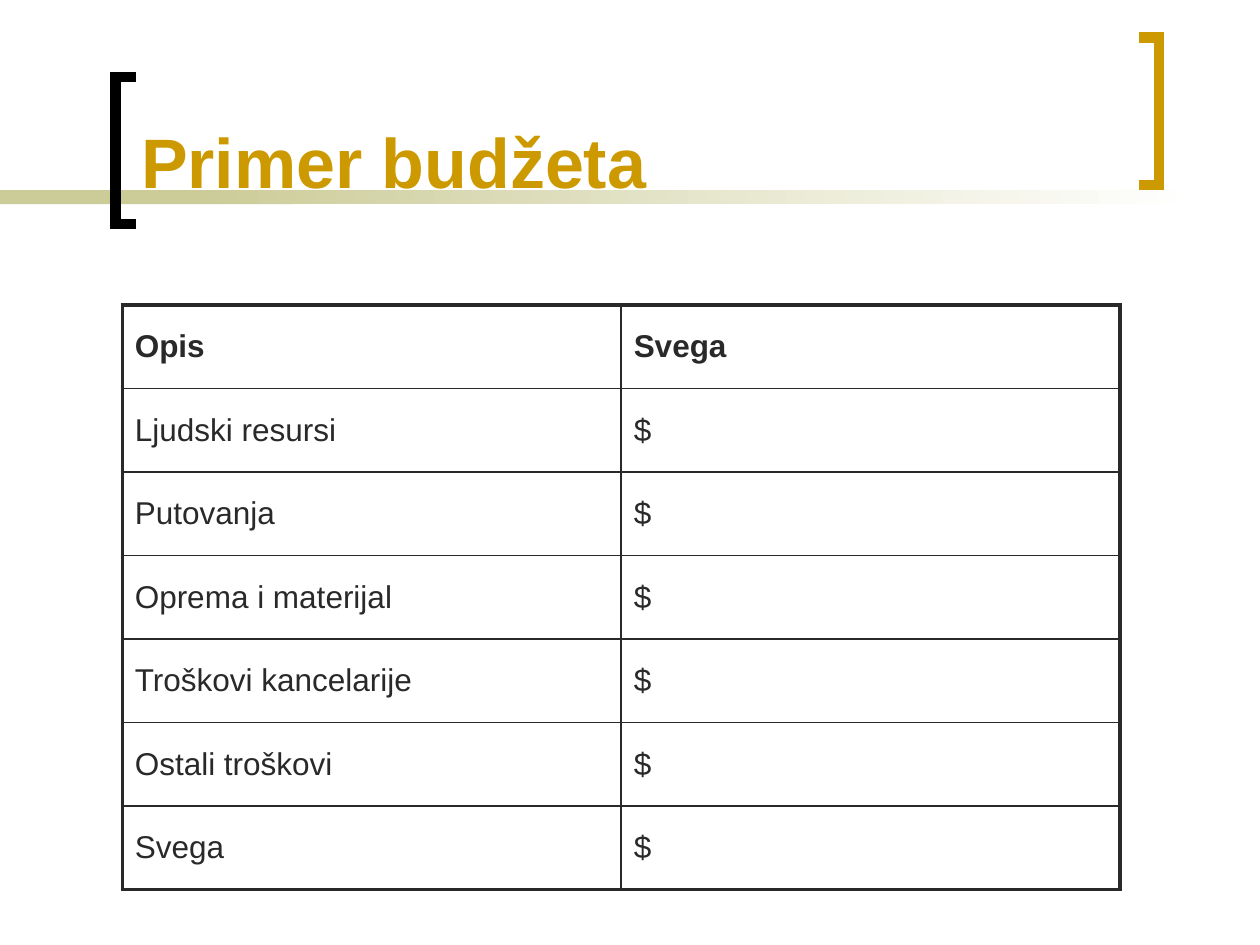
from lxml.etree import SubElement
from pptx import Presentation
from pptx.dml.color import RGBColor
from pptx.enum.shapes import MSO_SHAPE
from pptx.enum.text import MSO_ANCHOR, MSO_AUTO_SIZE, PP_ALIGN
from pptx.oxml.ns import qn
from pptx.util import Pt

INK, GOLD, SAND, WHITE, BLACK = "292929", "CC9900", "CCCC99", "FFFFFF", "000000"
THIN, THICK = 1, 2.25
ROWS = [
    ("Opis", "Svega"),
    ("Ljudski resursi", "$"),
    ("Putovanja", "$"),
    ("Oprema i materijal", "$"),
    ("Troškovi kancelarije", "$"),
    ("Ostali troškovi", "$"),
    ("Svega", "$"),
]


def paint(item, color):
    """Give a fill or line format a solid colour."""
    item.solid()
    item.fore_color.rgb = RGBColor.from_string(color)


def apply(item, values):
    """Set each named value on an object."""
    for name, value in values.items():
        setattr(item, name, value)


def style(para, size, color, bold):
    """Format the font of a paragraph's run."""
    font = para.runs[0].font
    apply(font, {"name": "Arial", "size": Pt(size), "bold": bold})
    font.color.rgb = RGBColor.from_string(color)


def add_bar(slide, left, width, fade=False):
    """Draw one part of the band, solid or fading to white."""
    bar = slide.shapes.add_shape(
        MSO_SHAPE.RECTANGLE, Pt(left), Pt(108.72), Pt(width), Pt(7.92))
    bar.shadow.inherit = False
    bar.line.fill.background()
    if not fade:
        paint(bar.fill, SAND)
        return
    bar.fill.gradient()
    bar.fill.gradient_angle = 0
    for stop, place, color in zip(bar.fill.gradient_stops, (0, 1), (SAND, WHITE)):
        stop.position = place
        stop.color.rgb = RGBColor.from_string(color)


def add_mark(slide, spine, tip, top, color):
    """Draw a square bracket whose arms reach from spine to tip."""
    base = top + 84.24
    pen = slide.shapes.build_freeform(Pt(tip), Pt(top))
    pen.add_line_segments(
        [(Pt(x), Pt(y)) for x, y in ((spine, top), (spine, base), (tip, base))],
        close=False)
    mark = pen.convert_to_shape()
    mark.shadow.inherit = False
    mark.fill.background()
    mark.line.width = Pt(6)
    paint(mark.line.fill, color)
    SubElement(mark.line._ln, qn("a:miter"), lim="800000")


def set_title(slide, text):
    """Place the title in front of the band."""
    title = slide.shapes.title
    apply(title, {"left": Pt(73.44), "top": Pt(7.92),
                  "width": Pt(563.76), "height": Pt(111.6)})
    frame = title.text_frame
    apply(frame, {"text": text, "word_wrap": True, "auto_size": MSO_AUTO_SIZE.NONE,
                  "vertical_anchor": MSO_ANCHOR.BOTTOM})
    para = frame.paragraphs[0]
    para.alignment = PP_ALIGN.LEFT
    style(para, 40, GOLD, True)
    slide.shapes._spTree.append(title._element)


def add_edge(cell, side, width):
    """Draw one border of a cell."""
    edge = SubElement(cell._tc.get_or_add_tcPr(), qn(f"a:ln{side}"), w=str(Pt(width)))
    fill = SubElement(edge, qn("a:solidFill"))
    SubElement(fill, qn("a:srgbClr"), val=INK)


def add_grid(slide, rows):
    """Add the budget table with a thick outer frame."""
    high, wide = len(rows), len(rows[0])
    frame = slide.shapes.add_table(
        high, wide, Pt(69.84), Pt(174.24), Pt(570.24), Pt(334.08))
    table = frame.table
    apply(table, {"first_row": False, "horz_banding": False})
    for r, row in enumerate(rows):
        for c, text in enumerate(row):
            cell = table.cell(r, c)
            apply(cell, {"text": text, "vertical_anchor": MSO_ANCHOR.MIDDLE})
            para = cell.text_frame.paragraphs[0]
            para.space_before = Pt(3.6)
            style(para, 18, INK, r == 0)
            outer = {"L": c == 0, "R": c == wide - 1, "T": r == 0, "B": r == high - 1}
            for side, rim in outer.items():
                add_edge(cell, side, THICK if rim else THIN)
            cell.fill.background()


def main():
    """Build and save the budget slide."""
    deck = Presentation()
    apply(deck, {"slide_width": Pt(720), "slide_height": Pt(540)})
    slide = deck.slides.add_slide(deck.slide_layouts[5])
    paint(slide.background.fill, WHITE)
    add_bar(slide, 0, 167.76)
    add_bar(slide, 113.76, 570.24, fade=True)
    add_mark(slide, 66, 77.76, 43.92, BLACK)
    add_mark(slide, 662.4, 650.88, 21.6, GOLD)
    set_title(slide, "Primer budžeta")
    add_grid(slide, ROWS)
    deck.save("out.pptx")


if __name__ == "__main__":
    main()
